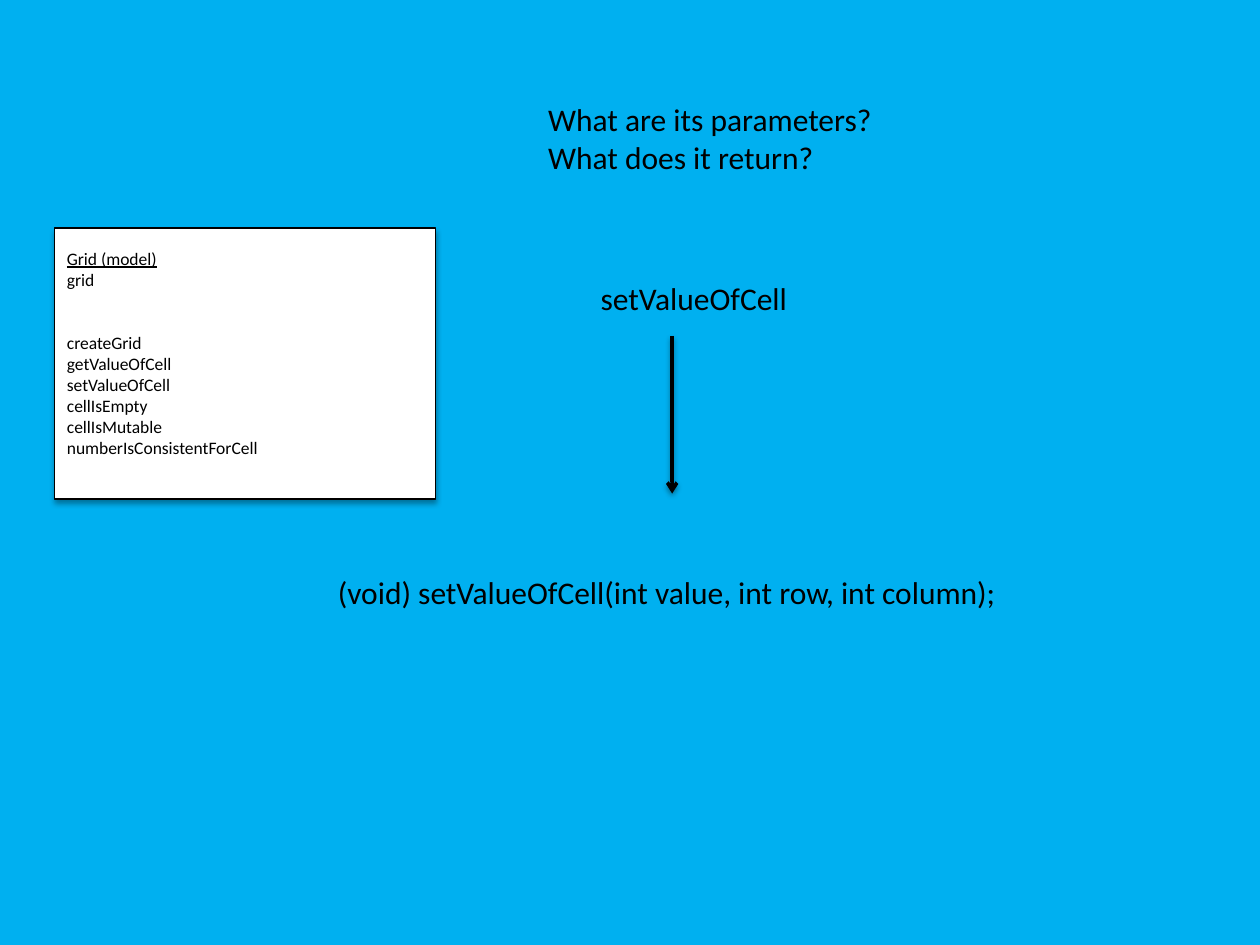
"""Build the slide on the parameters and return value of setValueOfCell."""
import pptx
import pptx.util
import pptx.oxml
import pptx.oxml.ns
import pptx.dml.color
import pptx.enum.shapes
import pptx.enum.text

Cm = pptx.util.Cm
Pt = pptx.util.Pt
BLACK = pptx.dml.color.RGBColor(0, 0, 0)
WHITE = pptx.dml.color.RGBColor(255, 255, 255)
BLUE = pptx.dml.color.RGBColor(0, 0xB0, 0xF0)
NS = pptx.oxml.ns.nsdecls("a")


def write(frame, lines, size):
    frame.text = "\n".join(lines)
    for para in frame.paragraphs:
        para.alignment = pptx.enum.text.PP_ALIGN.LEFT
        font = para.runs[0].font
        for key, val in {"name": "Calibri", "size": Pt(size)}.items():
            setattr(font, key, val)
        font.color.rgb = BLACK


def shade(item, dist, alpha):
    item._element.spPr.append(pptx.oxml.parse_xml(
        f'<a:effectLst {NS}><a:outerShdw blurRad="40000" dist="{dist}" '
        f'dir="5400000" rotWithShape="0"><a:srgbClr val="000000">'
        f'<a:alpha val="{alpha}"/></a:srgbClr></a:outerShdw></a:effectLst>'))


deck = pptx.Presentation()
deck.slide_width, deck.slide_height = Cm(25.4), Cm(19.05)
slide = deck.slides.add_slide(deck.slide_layouts[6])
slide.background.fill.solid()
slide.background.fill.fore_color.rgb = BLUE

notes = [
    (11.86, 5.5, 4.34, 1.03, ["setValueOfCell"]),
    (10.8, 1.9, 7.16, 1.8, ["What are its parameters?", "What does it return?"]),
    (6.56, 11.43, 14.04, 1.03,
     ["(void) setValueOfCell(int value, int row, int column);"]),
]
for left, top, width, height, lines in notes:
    box = slide.shapes.add_textbox(Cm(left), Cm(top), Cm(width), Cm(height))
    form = {"word_wrap": False,
            "auto_size": pptx.enum.text.MSO_AUTO_SIZE.SHAPE_TO_FIT_TEXT}
    for key, val in form.items():
        setattr(box.text_frame, key, val)
    write(box.text_frame, lines, 18)

arrow = slide.shapes.add_connector(
    pptx.enum.shapes.MSO_CONNECTOR.STRAIGHT,
    Cm(13.55), Cm(6.77), Cm(13.55), Cm(9.95))
arrow.line.color.rgb = BLACK
arrow.line.width = Pt(2)
arrow.line._get_or_add_ln().append(
    pptx.oxml.parse_xml(f'<a:tailEnd {NS} type="arrow"/>'))
shade(arrow, 20000, 38000)

card = slide.shapes.add_shape(
    pptx.enum.shapes.MSO_SHAPE.RECTANGLE,
    Cm(1.1), Cm(4.6), Cm(7.68), Cm(5.46))
card.fill.solid()
card.fill.fore_color.rgb = WHITE
card.line.color.rgb = BLACK
card.line.width = Pt(0.75)
shade(card, 23000, 35000)

form = {"word_wrap": True, "margin_bottom": Cm(0.55),
        "vertical_anchor": pptx.enum.text.MSO_ANCHOR.MIDDLE}
for key, val in form.items():
    setattr(card.text_frame, key, val)
head = ["Grid (model)", "grid"]
calls = ["createGrid", "getValueOfCell", "setValueOfCell", "cellIsEmpty",
         "cellIsMutable", "numberIsConsistentForCell"]
write(card.text_frame, head + calls, 10)
paras = card.text_frame.paragraphs
paras[0].runs[0].font.underline = True
paras[len(head)].space_before = Pt(24)

deck.save("out.pptx")
